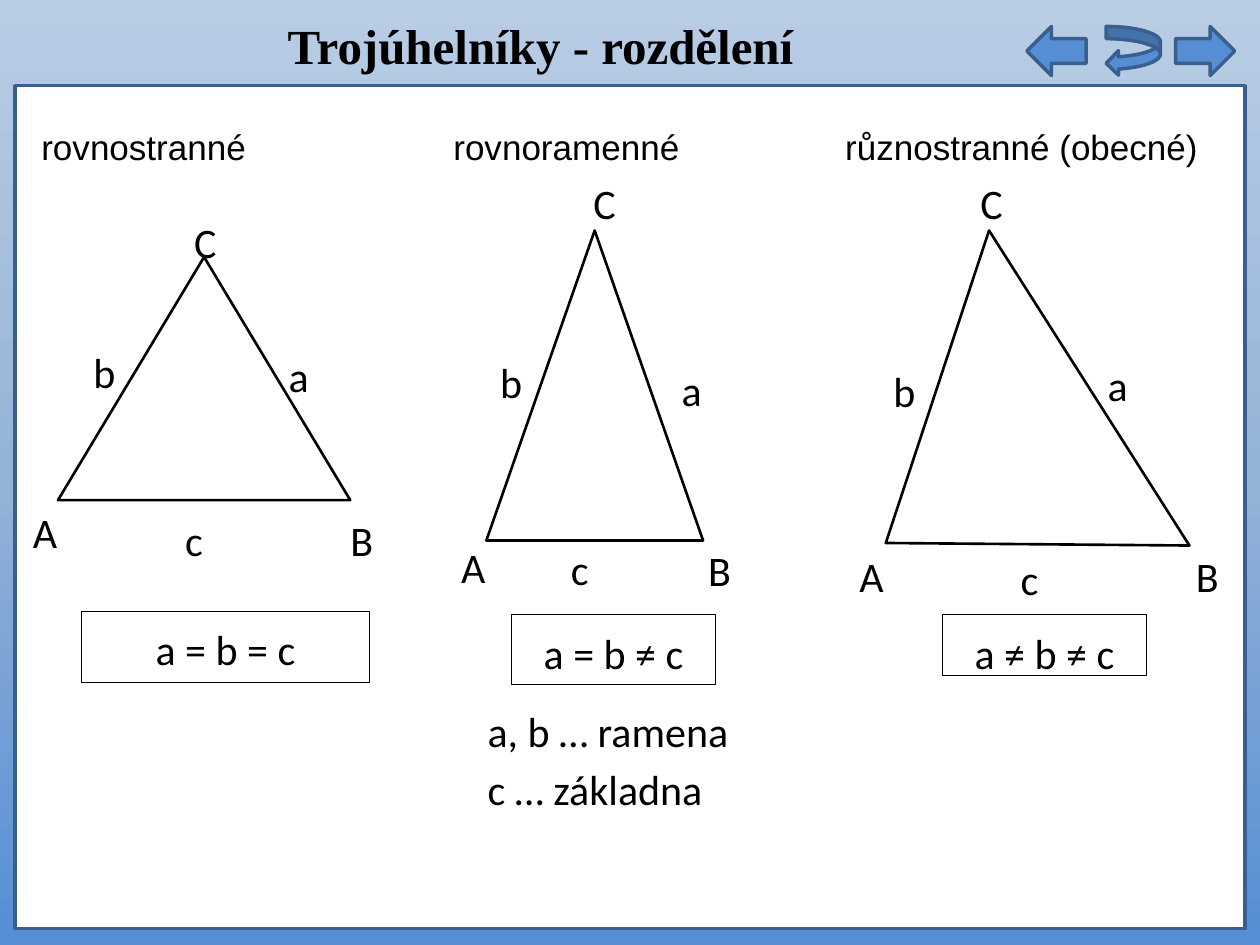
import copy

import pptx
import pptx.dml.color
import pptx.enum.shapes
import pptx.enum.text
import pptx.oxml.ns
import pptx.util

Inches, Pt = pptx.util.Inches, pptx.util.Pt
RGBColor = pptx.dml.color.RGBColor
SHAPE = pptx.enum.shapes.MSO_SHAPE
ALIGN = pptx.enum.text.PP_ALIGN
ANCHOR = pptx.enum.text.MSO_ANCHOR

BLACK = RGBColor(0x00, 0x00, 0x00)
WHITE = RGBColor(0xFF, 0xFF, 0xFF)
BLUE = RGBColor(0x55, 0x8E, 0xD5)
DARK_BLUE = RGBColor(0x3A, 0x5F, 0x8C)
BACKGROUND = [(0, RGBColor(0xB9, 0xCD, 0xE5)), (0.5, RGBColor(0x95, 0xB3, 0xD7)), (1, BLUE)]

# Content: lengths in inches, boxes as (left, top, width, height)
WIDTH, HEIGHT = 10, 7.5
TITLE = "Trojúhelníky - rozdělení"
PANEL = (0.12, 0.68, 9.76, 6.69)
BUTTONS = [
    (SHAPE.RIGHT_ARROW, 9.33, 0.47),
    (SHAPE.LEFT_ARROW, 8.15, 0.47),
    (SHAPE.CURVED_LEFT_ARROW, 8.78, 0.43),
]
BUTTON_TOP, BUTTON_HEIGHT = 0.21, 0.39
HEADING_TOP, HEADING_HEIGHT = 0.94, 0.44
LABEL_WIDTH, LABEL_HEIGHT = 0.29, 0.42
INSET = 0.04

TRIANGLES = [
    {
        "heading": ("rovnostranné", 0.23, 2.16),
        "isosceles": (0.46, 2.04, 2.32, 1.93),
        "labels": {"c": (1.43, 3.98), "C": (1.5, 1.62), "a": (2.25, 2.68),
                   "b": (0.7, 2.65), "A": (0.22, 3.92), "B": (2.74, 3.98)},
        "rule": ("a = b = c", (0.65, 4.85, 2.28, 0.57)),
    },
    {
        "heading": ("rovnoramenné", 3.5, 2.37),
        "isosceles": (3.86, 1.83, 1.72, 2.46),
        "labels": {"c": (4.49, 4.21), "C": (4.67, 1.31), "a": (5.37, 2.79),
                   "b": (3.93, 2.73), "A": (3.62, 4.2), "B": (5.58, 4.22)},
        "rule": ("a = b ≠ c", (4.06, 4.88, 1.62, 0.55)),
    },
    {
        "heading": ("různostranné (obecné)", 6.61, 3.23),
        "corners": [(7.03, 4.31), (9.44, 4.33), (7.85, 1.83)],
        "labels": {"c": (8.06, 4.29), "C": (7.74, 1.31), "a": (8.75, 2.75),
                   "b": (7.05, 2.8), "A": (6.78, 4.27), "B": (9.45, 4.27)},
        "rule": ("a ≠ b ≠ c", (7.48, 4.88, 1.62, 0.48)),
    },
]
NOTE = ("a, b … ramena\nc … základna", (3.83, 5.5, 2.39, 1.08))


def style_shape(shape, fill, line, width):
    shape.shadow.inherit = False
    if fill is None:
        shape.fill.background()
    else:
        shape.fill.solid()
        shape.fill.fore_color.rgb = fill
    shape.line.color.rgb = line
    shape.line.width = Pt(width)


def add_preset(slide, kind, box, fill=None, line=BLACK, width=1.5):
    shape = slide.shapes.add_shape(kind, *map(Inches, box))
    style_shape(shape, fill, line, width)
    return shape


def write_text(shape, text, size, font, align=ALIGN.LEFT, anchor=ANCHOR.MIDDLE, bold=False):
    frame = shape.text_frame
    frame.word_wrap = True
    frame.vertical_anchor = anchor
    frame.text = text
    for paragraph in frame.paragraphs:
        paragraph.alignment = align
        for run in paragraph.runs:
            run.font.size = Pt(size)
            run.font.name = font
            run.font.bold = bold
            run.font.color.rgb = BLACK


def write_formula(shape, text, align=ALIGN.LEFT, space_after=0):
    write_text(shape, text, 24, "Calibri", align, ANCHOR.TOP)
    frame = shape.text_frame
    frame.margin_left = frame.margin_right = Inches(INSET)
    frame.margin_top = frame.margin_bottom = Inches(INSET)
    for paragraph in frame.paragraphs:
        paragraph.line_spacing = 1.15
    frame.paragraphs[-1].space_after = Pt(space_after)


def add_text_box(slide, box):
    return slide.shapes.add_textbox(*map(Inches, box))


def paint_background(slide):
    fill = slide.background.fill
    fill.gradient()
    fill.gradient_angle = 270
    stop_list = slide.element.find(".//" + pptx.oxml.ns.qn("a:gsLst"))
    stop_list.insert(1, copy.deepcopy(stop_list[0]))
    for stop, (position, color) in zip(fill.gradient_stops, BACKGROUND):
        stop.position = position
        stop.color.rgb = color


def add_triangle(slide, triangle):
    # Outline
    if "isosceles" in triangle:
        add_preset(slide, SHAPE.ISOSCELES_TRIANGLE, triangle["isosceles"])
    else:
        start, *others = [(Inches(x), Inches(y)) for x, y in triangle["corners"]]
        builder = slide.shapes.build_freeform(*start)
        builder.add_line_segments(others, close=True)
        style_shape(builder.convert_to_shape(), None, BLACK, 1.5)

    # Vertex and side labels
    for letter, (left, top) in triangle["labels"].items():
        label = add_text_box(slide, (left, top, LABEL_WIDTH, LABEL_HEIGHT))
        write_formula(label, letter, space_after=10)

    # Rule for the sides
    text, box = triangle["rule"]
    write_formula(add_preset(slide, SHAPE.RECTANGLE, box, width=0.5), text, ALIGN.CENTER)

    # Heading
    text, left, width = triangle["heading"]
    heading = add_text_box(slide, (left, HEADING_TOP, width, HEADING_HEIGHT))
    write_text(heading, text, 20, "Arial")
    heading.text_frame.auto_size = pptx.enum.text.MSO_AUTO_SIZE.SHAPE_TO_FIT_TEXT


def main():
    presentation = pptx.Presentation()
    presentation.slide_width, presentation.slide_height = Inches(WIDTH), Inches(HEIGHT)
    slide = presentation.slides.add_slide(presentation.slide_layouts[6])
    paint_background(slide)

    # Panel, navigation buttons and title
    add_preset(slide, SHAPE.RECTANGLE, PANEL, WHITE, DARK_BLUE, 2)
    for kind, left, width in BUTTONS:
        add_preset(slide, kind, (left, BUTTON_TOP, width, BUTTON_HEIGHT), BLUE, DARK_BLUE, 2)
    title = add_text_box(slide, (0.03, -0.03, 8.52, 0.77))
    write_text(title, TITLE, 28, "Times New Roman", ALIGN.CENTER, bold=True)

    # Triangles and the note on side names
    for triangle in TRIANGLES:
        add_triangle(slide, triangle)
    text, box = NOTE
    write_formula(add_text_box(slide, box), text, space_after=10)

    presentation.save("out.pptx")


if __name__ == "__main__":
    main()
